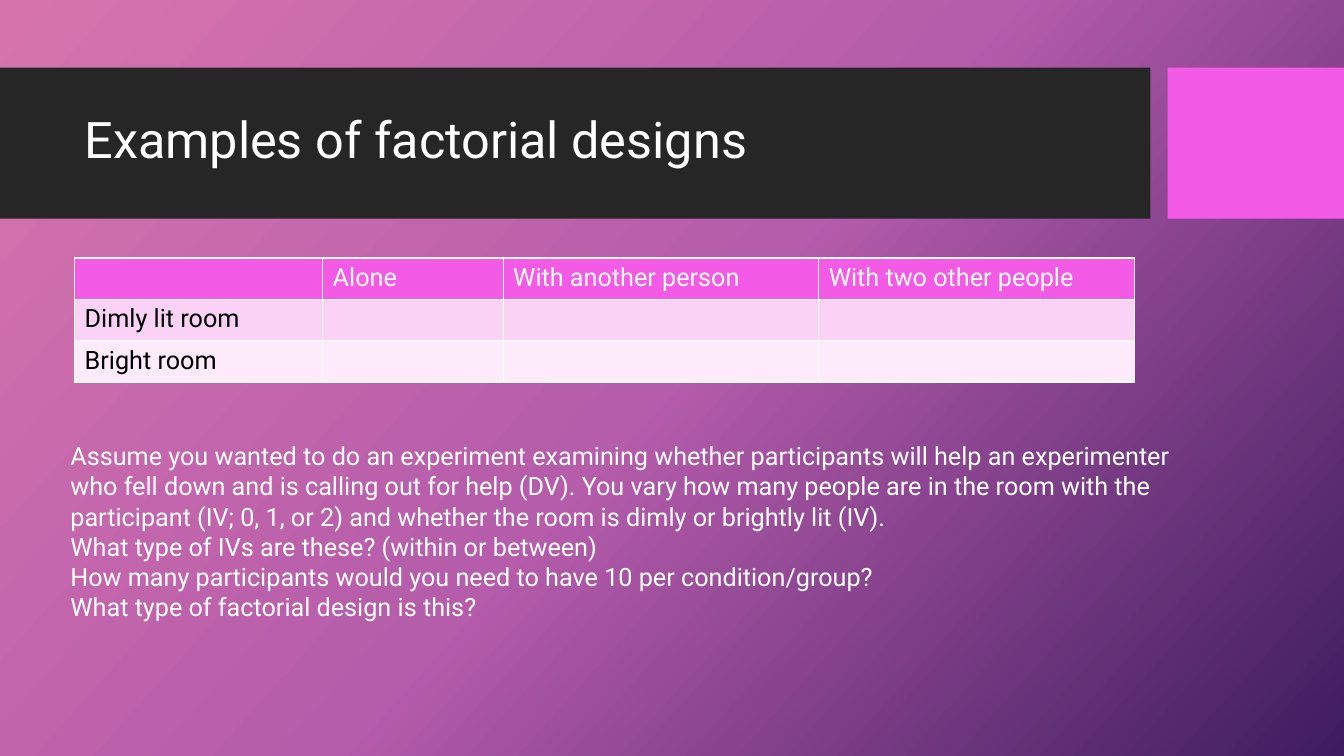
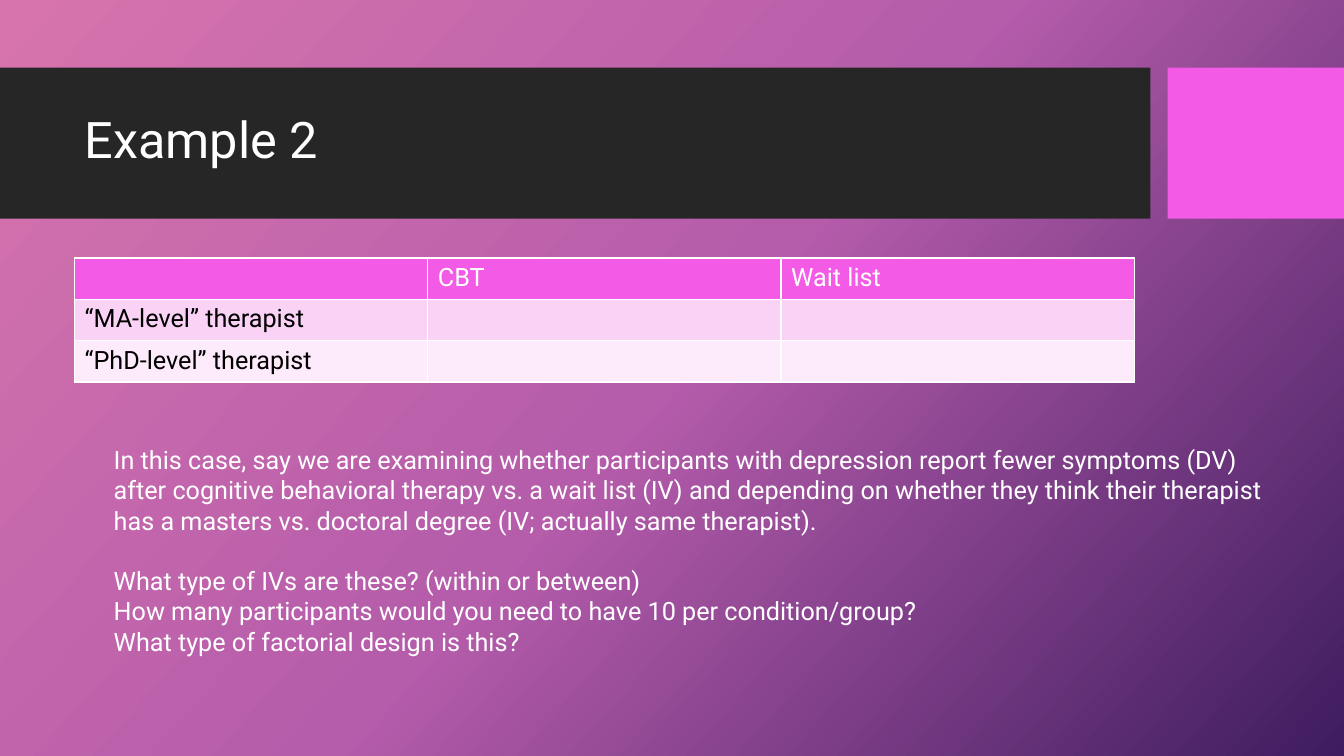
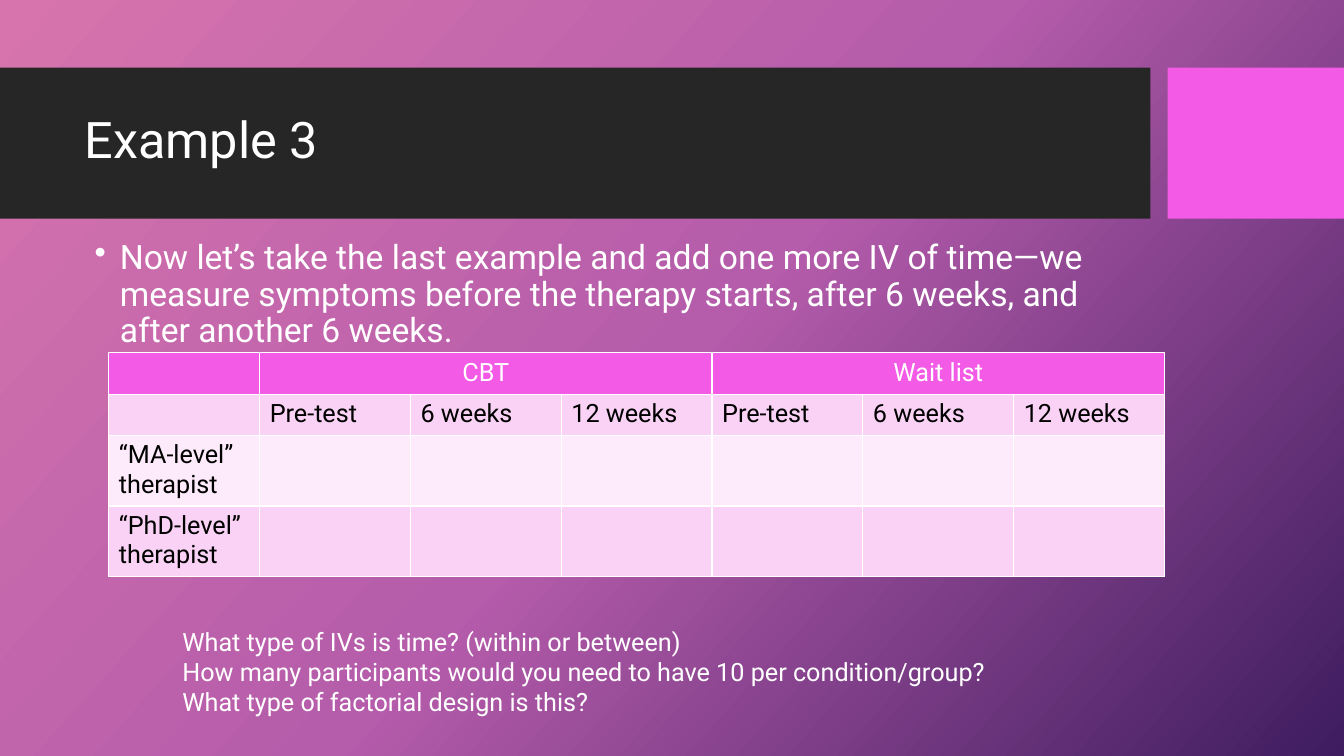
from copy import deepcopy

from lxml import etree
from pptx import Presentation
from pptx import util as u
from pptx.dml.color import RGBColor
from pptx.enum import shapes, text
from pptx.oxml.ns import qn

WIDTH, HEIGHT = 13.33, 7.5
FONT = "Roboto"
COLORS = {
    "white": "FFFFFF", "black": "000000", "band": "262626", "accent": "F35AE6",
    "stripe": "FAD2F5", "pale": "FDEAFA",
}
GRADIENT = [(0, "D774AD"), (0.5, "B55CAB"), (1, "3E1C5F")]
GRADIENT_ANGLE = 42

BAND_TOP, BAND_HEIGHT = 0.67, 1.5
BANDS = [("band", 0, 11.41), ("accent", 11.58, 1.75)]
TITLE_BOX = (0.74, 0.82, 10.51, 1.18)
ROW, TALL_ROW = 0.41, 0.69

TYPE_OF_IVS = "What type of IVs are these? (within or between)"
QUESTIONS = [
    "How many participants would you need to have 10 per condition/group?",
    "What type of factorial design is this?",
]
TIMES = ["Pre-test", "6 weeks", "12 weeks"]

# A cell of None continues the cell to its left.
SLIDES = [
    {
        "title": "Examples of factorial designs",
        "table": {
            "at": (0.74, 2.56),
            "columns": [2.46, 1.79, 3.13, 3.13],
            "rows": [ROW] * 3,
            "stripes": ["accent", "stripe", "pale"],
            "cells": [
                ["", "Alone", "With another person", "With two other people"],
                ["Dimly lit room", "", "", ""],
                ["Bright room", "", "", ""],
            ],
        },
        "notes": [((0.6, 4.32, 11.56, 1.92), [
            "Assume you wanted to do an experiment examining whether participants "
            "will help an experimenter who fell down and is calling out for help "
            "(DV). You vary how many people are in the room with the participant "
            "(IV; 0, 1, or 2) and whether the room is dimly or brightly lit (IV).",
            TYPE_OF_IVS, *QUESTIONS], {})],
    },
    {
        "title": "Example 2",
        "table": {
            "at": (0.74, 2.56),
            "columns": [10.51 / 3] * 3,
            "rows": [ROW] * 3,
            "stripes": ["accent", "stripe", "pale"],
            "cells": [
                ["", "CBT", "Wait list"],
                ["“MA-level” therapist", "", ""],
                ["“PhD-level” therapist", "", ""],
            ],
        },
        "notes": [((1.03, 4.36, 12.2, 2.83), [
            "In this case, say we are examining whether participants with "
            "depression report fewer symptoms (DV)",
            "after cognitive behavioral therapy vs. a wait list (IV) and depending "
            "on whether they think their therapist",
            "has a masters vs. doctoral degree (IV; actually same therapist).",
            TYPE_OF_IVS, *QUESTIONS], {"gaps": {3: 21.6}})],
    },
    {
        "title": "Example 3",
        "table": {
            "at": (1.08, 3.5),
            "columns": [10.47 / 7] * 7,
            "rows": [ROW, ROW, TALL_ROW, TALL_ROW],
            "stripes": ["accent", "stripe", "pale", "stripe"],
            "cells": [
                ["", "CBT", None, None, "Wait list", None, None],
                ["", *TIMES, *TIMES],
                ["“MA-level” therapist"] + [""] * 6,
                ["“PhD-level” therapist"] + [""] * 6,
            ],
        },
        "notes": [
            ((0.84, 2.34, 10.51, 1.4), [
                "Now let’s take the last example and add one more IV of time—we "
                "measure symptoms before the therapy starts, after 6 weeks, and "
                "after another 6 weeks."],
             {"size": 24, "spacing": 0.9, "bullet": "•"}),
            ((1.71, 6.16, 9.45, 1.01),
             ["What type of IVs is time? (within or between)", *QUESTIONS], {}),
        ],
    },
]


def inches(values):
    return [u.Inches(value) for value in values]


def rgb(name):
    return RGBColor.from_string(COLORS[name])


def write(frame, lines, size=18, color="white", spacing=None, align=None,
          bullet=None, gaps=None):
    """Fill a text frame; gaps maps a paragraph's index to its space before."""
    frame.word_wrap = True
    for index, line in enumerate(lines):
        paragraph = frame.add_paragraph() if index else frame.paragraphs[0]
        if bullet:
            properties = paragraph._p.get_or_add_pPr()
            properties.set("marL", str(u.Inches(0.25)))
            properties.set("indent", str(-u.Inches(0.25)))
            etree.SubElement(properties, qn("a:buChar")).set("char", bullet)
        if spacing:
            paragraph.line_spacing = spacing
        if gaps and index in gaps:
            paragraph.space_before = u.Pt(gaps[index])
        paragraph.alignment = align
        run = paragraph.add_run()
        run.text = line
        run.font.name, run.font.size, run.font.bold = FONT, u.Pt(size), False
        run.font.color.rgb = rgb(color)


def set_background(master):
    fill = master.background.fill
    fill.gradient()
    fill.gradient_angle = 360 - GRADIENT_ANGLE
    stops = next(master.element.iter(qn("a:gsLst")))
    stops.append(deepcopy(stops[-1]))
    for stop, (position, color) in zip(fill.gradient_stops, GRADIENT):
        stop.position = position
        stop.color.rgb = RGBColor.from_string(color)


def add_header(slide, title):
    for color, left, width in BANDS:
        band = slide.shapes.add_shape(
            shapes.MSO_SHAPE.RECTANGLE, *inches((left, BAND_TOP, width, BAND_HEIGHT)))
        band.shadow.inherit = False
        band.fill.solid()
        band.fill.fore_color.rgb = rgb(color)
        band.line.fill.background()
    frame = slide.shapes.add_textbox(*inches(TITLE_BOX)).text_frame
    frame.vertical_anchor = text.MSO_ANCHOR.MIDDLE
    write(frame, [title], size=36, spacing=0.9)


def paint_cell(cell, color):
    properties = cell._tc.get_or_add_tcPr()
    for side in ("lnL", "lnR", "lnT", "lnB"):
        border = etree.SubElement(properties, qn(f"a:{side}"), w=str(u.Pt(1)))
        solid = etree.SubElement(border, qn("a:solidFill"))
        etree.SubElement(solid, qn("a:srgbClr"), val=COLORS["white"])
    cell.fill.solid()
    cell.fill.fore_color.rgb = rgb(color)


def add_design(slide, at, columns, rows, stripes, cells):
    """Add the table of conditions."""
    table = slide.shapes.add_table(
        len(rows), len(columns), *inches((*at, sum(columns), sum(rows)))).table
    for column, width in zip(table.columns, columns):
        column.width = u.Inches(width)
    for row, height in zip(table.rows, rows):
        row.height = u.Inches(height)
    for r, (labels, stripe) in enumerate(zip(cells, stripes)):
        for c, label in enumerate(labels):
            cell = table.cell(r, c)
            paint_cell(cell, stripe)
            end = c + 1
            while end < len(labels) and labels[end] is None:
                end += 1
            spans = label is not None and end > c + 1
            if spans:
                cell.merge(table.cell(r, end - 1))
            if label:
                write(cell.text_frame, [label], color="black" if r else "white",
                      align=text.PP_ALIGN.CENTER if spans else None)


def main():
    prs = Presentation()
    prs.slide_width, prs.slide_height = inches((WIDTH, HEIGHT))
    set_background(prs.slide_master)
    for content in SLIDES:
        slide = prs.slides.add_slide(prs.slide_layouts[6])
        add_header(slide, content["title"])
        add_design(slide, **content["table"])
        for box, lines, style in content["notes"]:
            write(slide.shapes.add_textbox(*inches(box)).text_frame, lines, **style)
    prs.save("out.pptx")


if __name__ == "__main__":
    main()
